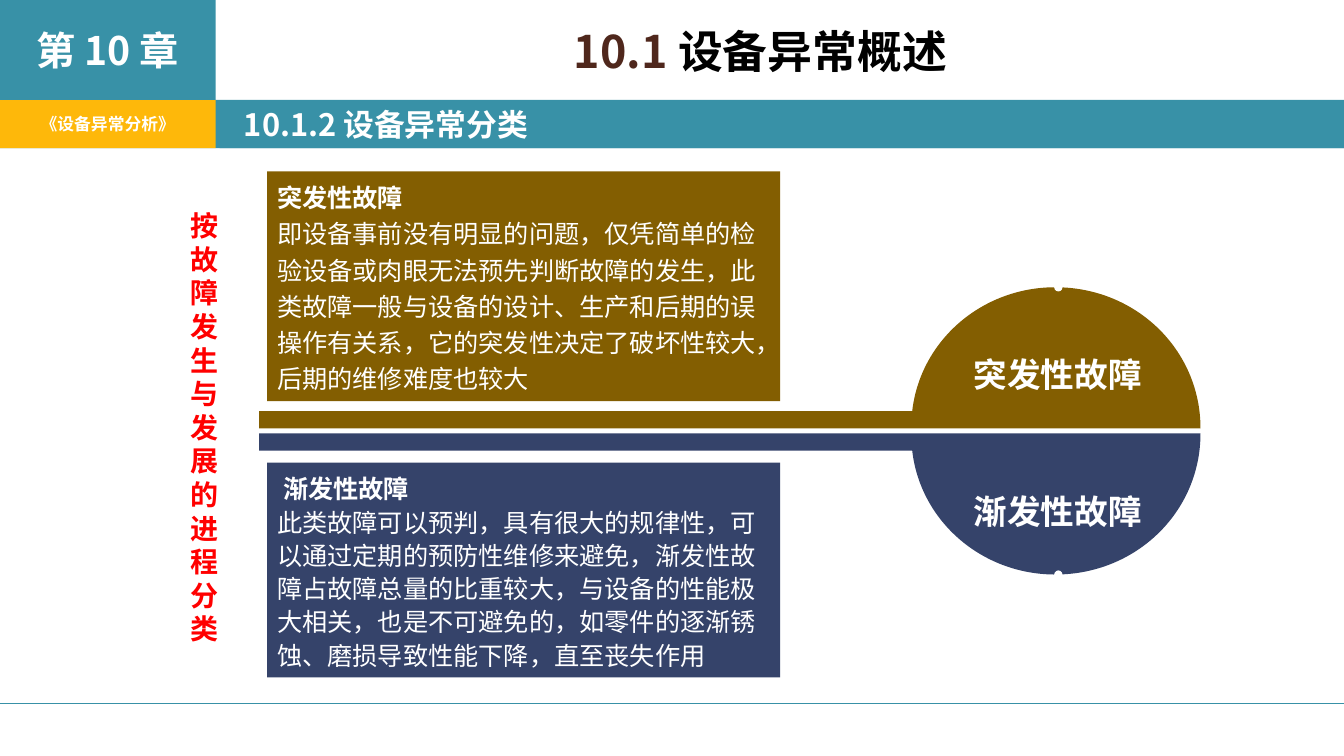
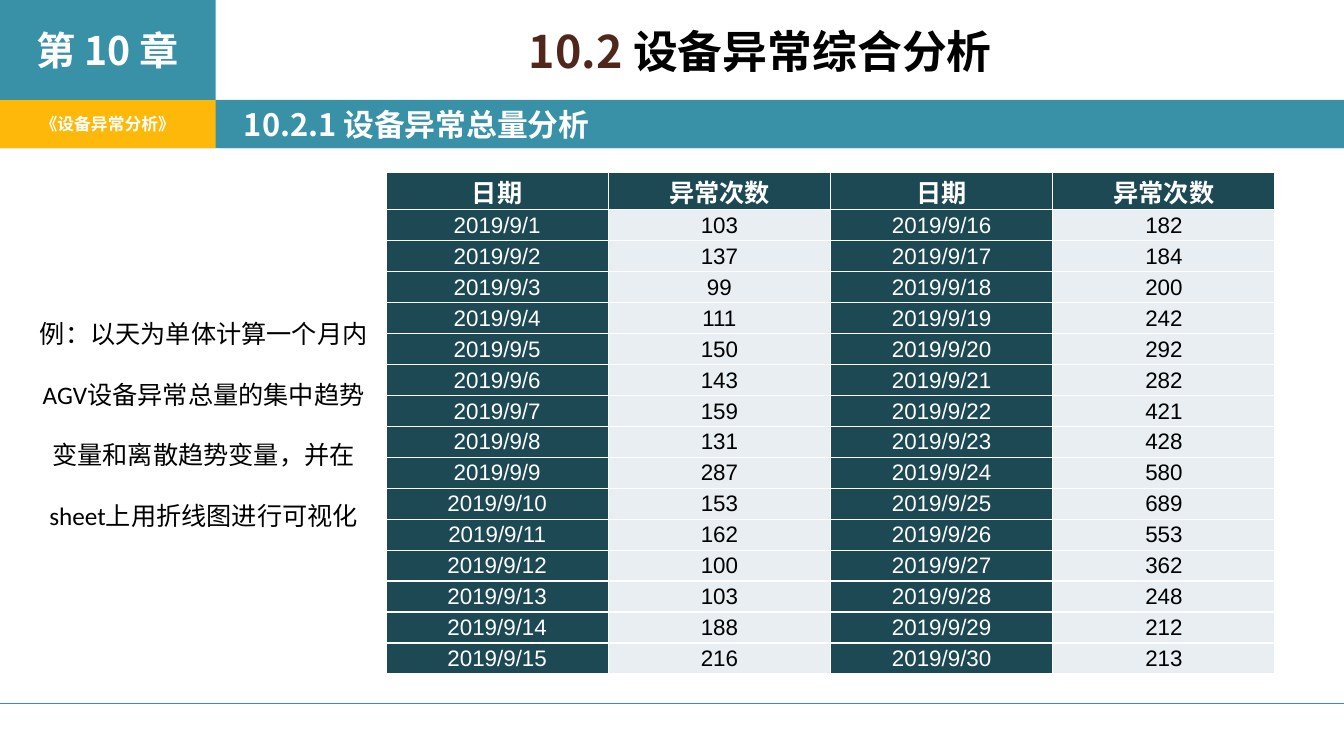
from lxml import etree
from pptx import Presentation
from pptx.dml.color import RGBColor
from pptx.enum.shapes import MSO_CONNECTOR, MSO_SHAPE
from pptx.enum.text import MSO_ANCHOR, PP_ALIGN
from pptx.oxml.ns import qn
from pptx.util import Inches, Pt

RECTANGLE = MSO_SHAPE.RECTANGLE
STRAIGHT = MSO_CONNECTOR.STRAIGHT
TOP, MIDDLE = MSO_ANCHOR.TOP, MSO_ANCHOR.MIDDLE
LEFT, CENTER = PP_ALIGN.LEFT, PP_ALIGN.CENTER

CJK, BODY, TABLE = "Noto Sans CJK SC", "Calibri", "Arial"
TEAL, YELLOW, BROWN = "3891A7", "FEB80A", "4F271C"
OCHRE, NAVY, RED = "835E01", "35436A", "FF0000"
DARK_TEAL, PALE, WHITE, BLACK = "1C4954", "E8EEF1", "FFFFFF", "000000"
SLIDE_WIDTH = 40 / 3
rgb = RGBColor.from_string


def add_panel(slide, left, top, width, height, fill=None, anchor=TOP):
    area = Inches(left), Inches(top), Inches(width), Inches(height)
    if fill:
        panel = slide.shapes.add_shape(RECTANGLE, *area)
        panel.shadow.inherit = False
        panel.fill.solid()
        panel.fill.fore_color.rgb = rgb(fill)
        panel.line.fill.background()
    else:
        panel = slide.shapes.add_textbox(*area)
    panel.text_frame.word_wrap = True
    panel.text_frame.vertical_anchor = anchor
    return panel


def format_text(paragraph, size, color, bold=True, font=CJK, align=LEFT):
    paragraph.alignment = align
    for run in paragraph.runs:
        run.font.size = Pt(size)
        run.font.bold = bold
        run.font.color.rgb = rgb(color)
        run.font.name = font
        etree.SubElement(run.font._element, qn("a:ea"), typeface=CJK)


prs = Presentation()
prs.slide_width, prs.slide_height = Inches(SLIDE_WIDTH), Inches(7.5)

headings = [
    ("10.1 ", "设备异常概述", "10.1.2 设备异常分类"),
    ("10.2 ", "设备异常综合分析", "10.2.1 设备异常总量分析"),
]
slides = []
for number, title, section in headings:
    slide = prs.slides.add_slide(prs.slide_layouts[6])
    slides.append(slide)
    add_panel(slide, 0, 0.99, SLIDE_WIDTH, 0.48, TEAL)

    course = add_panel(slide, 0, 0.99, 2.14, 0.48, YELLOW, MIDDLE).text_frame
    course.text = "《设备异常分析》"
    format_text(course.paragraphs[0], 12, WHITE, align=CENTER)

    chapter = add_panel(slide, 0, 0, 2.14, 0.99, TEAL, MIDDLE).text_frame
    chapter.text = "第 10 章"
    format_text(chapter.paragraphs[0], 28, WHITE, align=CENTER)

    footer_rule = slide.shapes.add_connector(
        STRAIGHT, 0, Inches(6.98), prs.slide_width, Inches(6.98))
    footer_rule.line.color.rgb = rgb(TEAL)
    footer_rule.line.width = Pt(0.79)
    etree.SubElement(footer_rule._element.spPr, qn("a:effectLst"))

    heading = add_panel(slide, 2.31, 0.19, 10.47, 0.8).text_frame.paragraphs[0]
    heading.text = number
    heading.add_run().text = title
    format_text(heading, 32, BLACK, align=CENTER)
    heading.runs[0].font.color.rgb = rgb(BROWN)

    band = add_panel(slide, 2.18, 1, SLIDE_WIDTH - 2.18, 0.47, TEAL, MIDDLE).text_frame
    band.margin_left = Inches(0.24)
    band.text = section
    format_text(band.paragraphs[0], 22, WHITE)

overview, totals = slides

MIRROR_Y = 4.275
upper_half = [
    (10.47, 2.85), (9.74, 2.85), (9.13, 3.38), (9.05, 4.08),
    (2.57, 4.08), (2.57, 4.25), (11.91, 4.25),
    (11.91, 3.47), (11.27, 2.85), (10.47, 2.85),
]
upper_leader = [(2.57, 2.5), (10.5, 2.5), (10.5, 2.85)]
for is_lower, color in ((False, OCHRE), (True, NAVY)):
    outline, leader_points = [
        [(Inches(x), Inches(2 * MIRROR_Y - y if is_lower else y)) for x, y in points]
        for points in (upper_half, upper_leader)]
    builder = overview.shapes.build_freeform(*outline[0])
    builder.add_line_segments(outline[1:], close=True)
    half_disc = builder.convert_to_shape()
    half_disc.shadow.inherit = False
    half_disc.fill.solid()
    half_disc.fill.fore_color.rgb = rgb(color)
    half_disc.line.fill.background()
    segments = list(half_disc._element.iter(qn("a:lnTo")))
    for arc in (segments[:3], segments[6:9]):
        curve = etree.Element(qn("a:cubicBezTo"))
        arc[0].addprevious(curve)
        for segment in arc:
            curve.append(segment[0])
            segment.getparent().remove(segment)

    builder = overview.shapes.build_freeform(*leader_points[0])
    builder.add_line_segments(leader_points[1:], close=False)
    leader = builder.convert_to_shape()
    leader.shadow.inherit = False
    leader.fill.background()
    leader.line.color.rgb = rgb(WHITE)
    leader.line.width = Pt(1)
    etree.SubElement(leader.line._get_or_add_ln(), qn("a:tailEnd"), type="oval")

faults = [
    ("突发性故障",
     "即设备事前没有明显的问题，仅凭简单的检验设备或肉眼无法预先判断故障的发生，此类故障一般与设备的设计、生产和后期的误操作有关系，它的突发性决定了破坏性较大，后期的维修难度也较大",
     OCHRE, 1.7, 2.28, 1.2, 0, 3.51),
    ("渐发性故障",
     "此类故障可以预判，具有很大的规律性，可以通过定期的预防性维修来避免，渐发性故障占故障总量的比重较大，与设备的性能极大相关，也是不可避免的，如零件的逐渐锈蚀、磨损导致性能下降，直至丧失作用",
     NAVY, 4.59, 2.13, 1.1, 0.06, 4.87),
]
for name, detail, color, top, height, spacing, indent, label_top in faults:
    label = add_panel(overview, 9.66, label_top, 1.77, 0.4, color).text_frame
    label.margin_left = label.margin_right = label.margin_top = label.margin_bottom = 0
    label.text = name
    format_text(label.paragraphs[0], 24, WHITE)

    description = add_panel(overview, 2.65, top, 5.09, height, color).text_frame
    description.text = name + "\n" + detail
    fault_name, fault_detail = description.paragraphs
    format_text(fault_name, 18, WHITE)
    format_text(fault_detail, 18, WHITE, bold=False)
    fault_name.line_spacing = 1.2
    fault_detail.line_spacing = spacing
    fault_name._p.get_or_add_pPr().set("indent", str(Inches(indent)))

criterion = add_panel(overview, 1.79, 2.02, 0.28, 4.48).text_frame
criterion.text = "按故障发生与发展的进程分类"
format_text(criterion.paragraphs[0], 20, RED, font=BODY, align=CENTER)

counts = [
    103, 137, 99, 111, 150, 143, 159, 131, 287, 153, 162, 100, 103, 188, 216,
    182, 184, 200, 242, 292, 282, 421, 428, 580, 689, 553, 362, 248, 212, 213,
]
half = len(counts) // 2
rows = [("日期", "异常次数") * 2]
for day in range(1, half + 1):
    later = day + half
    rows.append((f"2019/9/{day}", str(counts[day - 1]),
                 f"2019/9/{later}", str(counts[later - 1])))

TABLE_WIDTH, TABLE_HEIGHT, HEADER_HEIGHT = 8.82, 4.98, 0.37
daily = totals.shapes.add_table(
    len(rows), 4, Inches(3.83), Inches(1.71), Inches(TABLE_WIDTH), Inches(TABLE_HEIGHT)).table
for column in daily.columns:
    column.width = Inches(TABLE_WIDTH / 4)
for row_index, values in enumerate(rows):
    is_header = row_index == 0
    daily.rows[row_index].height = Inches(
        HEADER_HEIGHT if is_header else (TABLE_HEIGHT - HEADER_HEIGHT) / half)
    for column_index, value in enumerate(values):
        is_dark = is_header or column_index % 2 == 0
        cell = daily.cell(row_index, column_index)
        cell.text = value
        cell.vertical_anchor = MIDDLE
        cell.margin_left = cell.margin_right = cell.margin_top = Inches(0.01)
        cell.margin_bottom = 0
        format_text(cell.text_frame.paragraphs[0], 18 if is_header else 16,
                    WHITE if is_dark else BLACK, is_header, TABLE, CENTER)
        properties = cell._tc.get_or_add_tcPr()
        for edge in ("a:lnL", "a:lnR", "a:lnT", "a:lnB"):
            border = etree.SubElement(properties, qn(edge), w=str(Pt(1)))
            border_fill = etree.SubElement(border, qn("a:solidFill"))
            etree.SubElement(border_fill, qn("a:srgbClr"), val=WHITE)
        cell.fill.solid()
        cell.fill.fore_color.rgb = rgb(DARK_TEAL if is_dark else PALE)

example = add_panel(totals, 0.29, 2.81, 3.46, 2.44).text_frame
example.text = "例：以天为单体计算一个月内AGV设备异常总量的集中趋势变量和离散趋势变量，并在sheet上用折线图进行可视化"
format_text(example.paragraphs[0], 18, BLACK, False, BODY, CENTER)
example.paragraphs[0].line_spacing = 2.0

prs.save("out.pptx")
